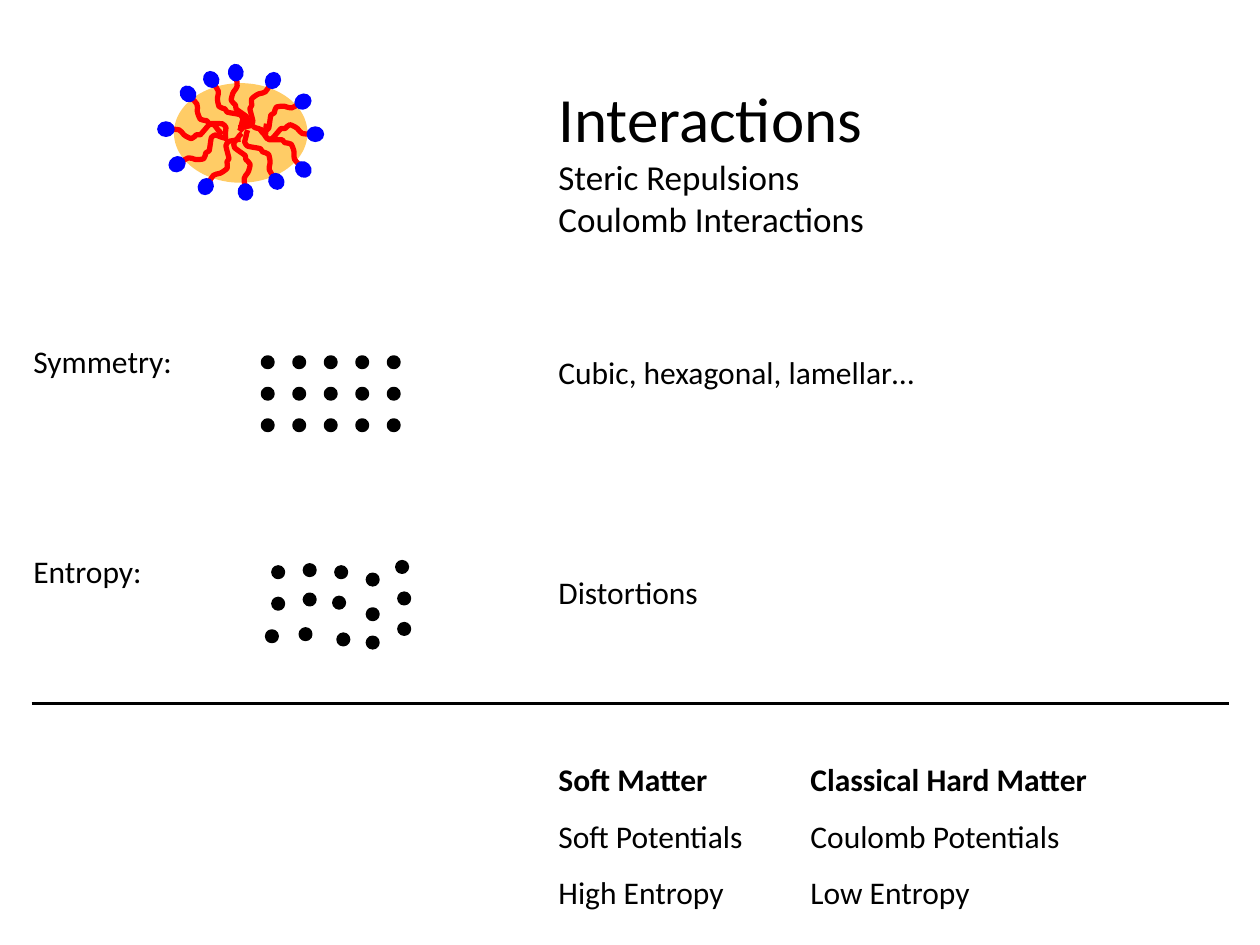
from dataclasses import dataclass
from itertools import product
from math import cos, radians, sin

from lxml import etree
from pptx import Presentation
from pptx.dml.color import RGBColor
from pptx.enum import shapes, text
from pptx.oxml.ns import qn
from pptx.util import Inches, Pt

COLUMNS, ROWS = 120, 90
WIDTH, HEIGHT = Inches(10), Inches(7.5)
BLACK, RED, BLUE, ORANGE = "000000", "FF0000", "0000FF", "FFCC66"
FONT = "Calibri"

TAIL_START = (0, 5)
TAIL_POINTS = [
    (3, 5), (5, 4), (7, 5), (9, 6), (9, 7), (11, 9),
    (12, 10), (16, 12), (17, 12), (19, 12), (20, 9), (21, 9),
    (22, 8), (23, 10), (24, 9), (26, 7), (29, 3), (31, 1),
    (33, 0), (33, 1), (35, 1), (36, 2), (37, 4), (38, 5),
    (39, 6), (40, 7), (41, 9),
]


@dataclass
class Line:
    words: str
    size: int = 18
    bold: bool = False


@dataclass
class Label:
    col: float
    row: float
    cols: float
    rows: float
    lines: list[Line]
    spacing: float | None = None


@dataclass
class Surfactant:
    col: float
    row: float
    angle: float
    length: float = 5.16
    thickness: float = 1.32


LABELS = [
    Label(2, 32, 15.72, 4.8, [Line("Symmetry:")]),
    Label(52, 33, 36.6, 4.8, [Line("Cubic, hexagonal, lamellar…")]),
    Label(2, 52, 12.84, 4.8, [Line("Entropy:")]),
    Label(52, 54, 15.84, 4.8, [Line("Distortions")]),
    Label(52, 70, 65.4, 17.5, [
        Line("Soft Matter\t\tClassical Hard Matter", bold=True),
        Line("Soft Potentials\t\tCoulomb Potentials"),
        Line("High Entropy\t\tLow Entropy"),
    ], 1.5),
    Label(52, 7, 31.8, 16.56, [
        Line("Interactions", 36),
        Line("Steric Repulsions", 20),
        Line("Coulomb Interactions", 20),
    ]),
]

SURFACTANTS = [
    Surfactant(27.18, 12.6, 180, 4.92, 1.44),
    Surfactant(26.34, 11.04, 148, 4.92, 1.44),
    Surfactant(19.86, 11.22, 46),
    Surfactant(21.66, 10.14, 55.6),
    Surfactant(22.74, 9.9, 81.1),
    Surfactant(24.3, 10.14, 121.1),
    Surfactant(18.66, 12.48, 0, 4.92, 1.44),
    Surfactant(19.38, 14.28, 328, 4.92, 1.44),
    Surfactant(26.94, 13.86, 226),
    Surfactant(24.78, 14.7, 235.6),
    Surfactant(23.1, 15.3, 261.1),
    Surfactant(21.3, 15.3, 301.1),
]

LATTICE = list(product(range(0, 9, 3), range(0, 15, 3)))
DISTORTIONS = [
    (0, 0), (0, -0.2), (0, 0), (0, 0.7), (-0.2, -0.5),
    (0, 0), (0, -0.4), (-0.2, -0.1), (0, 1), (0, -0.5),
    (-0.6, 0.1), (-0.4, -0.1), (0.2, 0.4), (0, 0.7), (0, -0.6),
]


def across(cols: float) -> int:
    return round(WIDTH * cols / COLUMNS)


def down(rows: float) -> int:
    return round(HEIGHT * rows / ROWS)


def color(value: str) -> RGBColor:
    return RGBColor.from_string(value)


def set_line(line, value: str, width: float) -> None:
    line.color.rgb = color(value)
    line.width = Pt(width)


def add_ellipse(parent, col: float, row: float, cols: float, rows: float,
                fill: str, angle: float = 0, outline: float = 0) -> None:
    sp = parent.add_shape(shapes.MSO_SHAPE.OVAL, across(col - cols / 2),
                          down(row - rows / 2), across(cols), down(rows))
    sp.rotation = angle
    sp.shadow.inherit = False
    sp.fill.solid()
    sp.fill.fore_color.rgb = color(fill)
    if outline:
        set_line(sp.line, fill, outline)
    else:
        sp.line.fill.background()


def curve_segments(sp) -> None:
    path = next(sp._element.iter(qn("a:path")))
    segments = path.findall(qn("a:lnTo"))
    for first in range(0, len(segments), 3):
        curve = etree.SubElement(path, qn("a:cubicBezTo"))
        for segment in segments[first:first + 3]:
            curve.append(segment[0])
            path.remove(segment)


def add_surfactant(parent, s: Surfactant) -> None:
    builder = parent.build_freeform(*TAIL_START, scale=Inches(0.01))
    builder.add_line_segments(TAIL_POINTS, close=False)
    sp = builder.convert_to_shape()
    curve_segments(sp)
    sp.left, sp.top = across(s.col - s.length / 2), down(s.row - s.thickness / 2)
    sp.width, sp.height = across(s.length), down(s.thickness)
    sp.rotation = s.angle
    sp.shadow.inherit = False
    sp.fill.background()
    set_line(sp.line, RED, 3)
    turn = radians(s.angle)
    dx, dy = -0.58 * s.length, -0.18
    add_ellipse(parent, s.col + dx * cos(turn) - dy * sin(turn),
                s.row + dx * sin(turn) + dy * cos(turn),
                1.68, 1.5, BLUE, s.angle)


def add_dots(parent, col: float, row: float, shifts: list) -> None:
    for (r, c), (dx, dy) in zip(LATTICE, shifts):
        add_ellipse(parent, col + c + dx + 0.5, row + r + dy + 0.5,
                    1, 1, BLACK, outline=2)


def add_label(parent, label: Label) -> None:
    sp = parent.add_textbox(across(label.col), down(label.row),
                            across(label.cols), down(label.rows))
    tf = sp.text_frame
    tf.word_wrap = False
    tf.auto_size = text.MSO_AUTO_SIZE.SHAPE_TO_FIT_TEXT
    for i, line in enumerate(label.lines):
        p = tf.add_paragraph() if i else tf.paragraphs[0]
        p.line_spacing = label.spacing
        r = p.add_run()
        r.text = line.words
        r.font.name = FONT
        r.font.size = Pt(line.size)
        r.font.bold = line.bold
        r.font.color.rgb = color(BLACK)


def add_divider(parent, row: float, start: float, end: float) -> None:
    sp = parent.add_connector(shapes.MSO_CONNECTOR.STRAIGHT, across(start),
                              down(row), across(end), down(row))
    set_line(sp.line, BLACK, 2)
    etree.SubElement(sp._element.spPr, qn("a:effectLst"))


def main() -> None:
    prs = Presentation()
    prs.slide_width, prs.slide_height = WIDTH, HEIGHT
    canvas = prs.slides.add_slide(prs.slide_layouts[6]).shapes
    micelle = canvas.add_group_shape().shapes
    add_ellipse(micelle, 22.92, 12.66, 12.72, 9.48, ORANGE, 180)
    for surfactant in SURFACTANTS:
        add_surfactant(micelle, surfactant)
    add_dots(canvas.add_group_shape().shapes, 25, 34, [(0, 0)] * len(LATTICE))
    add_dots(canvas, 26, 54, DISTORTIONS)
    for label in LABELS:
        add_label(canvas, label)
    add_divider(canvas, 67, 3, 117)
    prs.save("out.pptx")


if __name__ == "__main__":
    main()
